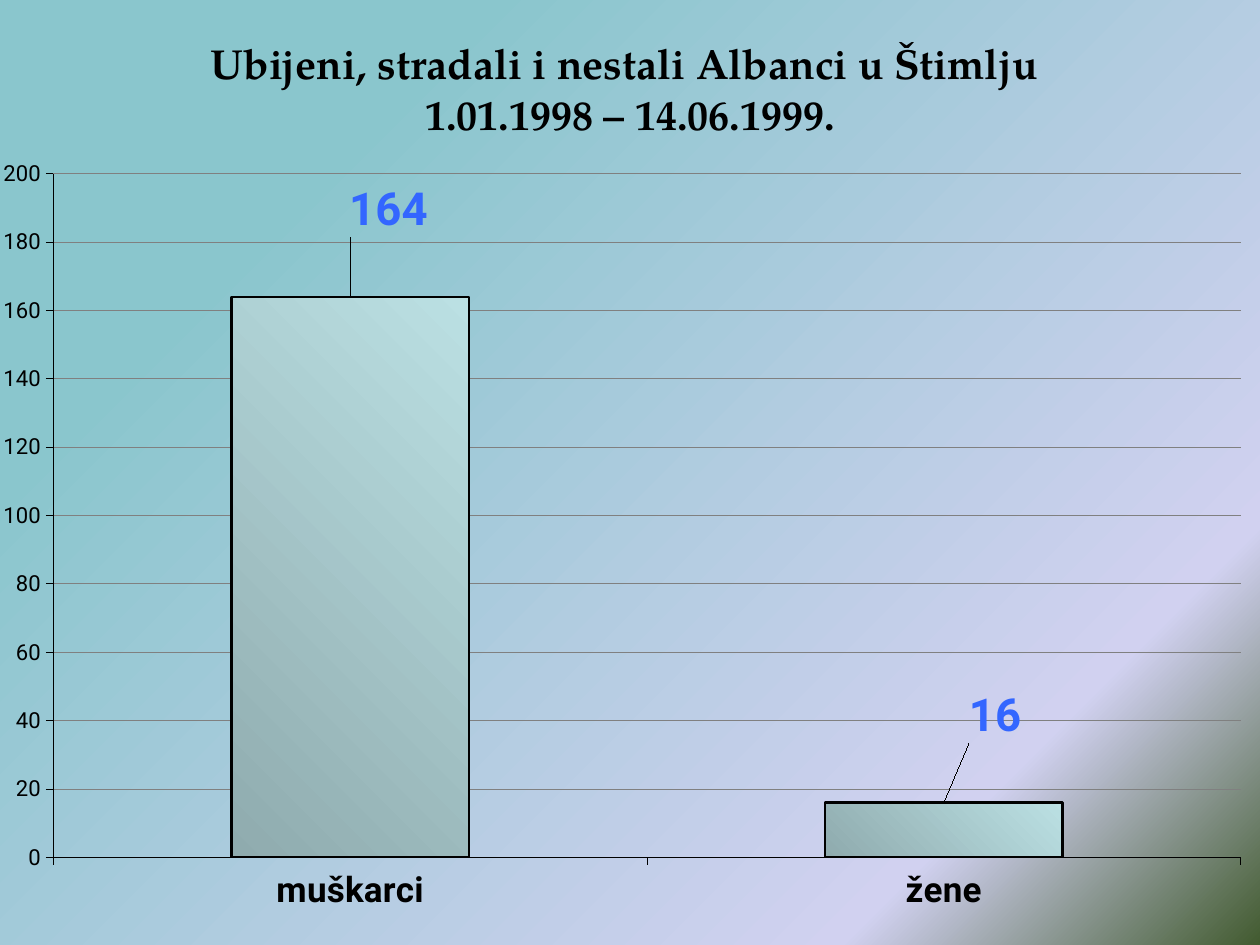
import copy

import pptx
import pptx.chart.data
import pptx.dml.color
import pptx.enum.chart
import pptx.enum.text
import pptx.oxml
import pptx.oxml.ns
import pptx.util


def color(hex_code):
    return pptx.dml.color.RGBColor.from_string(hex_code)


def paint_gradient(fill, owner, angle, stops):
    """Fill with (position, colour) stops; the angle runs counter-clockwise."""
    fill.gradient()
    fill.gradient_angle = angle
    stop_list = owner.find(".//" + pptx.oxml.ns.qn("a:gsLst"))
    while len(stop_list) < len(stops):
        stop_list.append(copy.deepcopy(stop_list[-1]))
    for stop, (position, hex_code) in zip(fill.gradient_stops, stops):
        stop.position = position
        stop.color.rgb = color(hex_code)


presentation = pptx.Presentation()
presentation.slide_width = pptx.util.Inches(10)
presentation.slide_height = pptx.util.Inches(7.5)
width, height = presentation.slide_width, presentation.slide_height
slide = presentation.slides.add_slide(presentation.slide_layouts[6])

# Background
paint_gradient(slide.background.fill, slide.element, 315,
               [(0.22, "8AC6CD"), (0.81, "D1D1F0"), (1, "425B30")])

# Column chart
chart_data = pptx.chart.data.CategoryChartData()
chart_data.categories = ["muškarci", "žene"]
chart_data.add_series("Series 1", [164, 16])
chart = slide.shapes.add_chart(
    pptx.enum.chart.XL_CHART_TYPE.COLUMN_CLUSTERED,
    pptx.util.Inches(-0.21), pptx.util.Inches(1.25),
    pptx.util.Inches(10.21), pptx.util.Inches(6.13), chart_data).chart
chart.has_title = False
chart.has_legend = False
chart.font.name = "Roboto"
chart.font.color.rgb = color("000000")

# Axes
for axis, size, bold in [(chart.category_axis, 20, True),
                         (chart.value_axis, 12.6, False)]:
    axis.tick_labels.font.size = pptx.util.Pt(size)
    axis.tick_labels.font.bold = bold
    axis.tick_labels.font.name = "Roboto"
    axis.tick_labels.font.color.rgb = color("000000")
    axis.major_tick_mark = pptx.enum.chart.XL_TICK_MARK.OUTSIDE
    axis.format.line.color.rgb = color("000000")
    axis.format.line.width = pptx.util.Pt(0.31)
chart.category_axis.tick_label_position = pptx.enum.chart.XL_TICK_LABEL_POSITION.LOW
chart.value_axis.minimum_scale = 0
chart.value_axis.maximum_scale = 200
chart.value_axis.major_unit = 20
gridlines = chart.value_axis.major_gridlines.format.line
gridlines.color.rgb = color("808080")
gridlines.width = pptx.util.Pt(0.31)

# Columns
plot = chart.plots[0]
plot.gap_width = 150
plot.vary_by_categories = False
series = plot.series[0]
paint_gradient(series.format.fill, series._element, 45,
               [(0, "8FABAE"), (1, "BBE0E3")])
series.format.line.color.rgb = color("000000")
series.format.line.width = pptx.util.Pt(1.25)

# Value labels, shifted up and to the right of each column
namespace = pptx.oxml.ns.nsdecls("c")
for index, shift in enumerate([0.03, 0.04]):
    label = series.points[index].data_label
    label.position = pptx.enum.chart.XL_LABEL_POSITION.OUTSIDE_END
    label.font.size = pptx.util.Pt(26)
    label.font.bold = True
    label.font.name = "Roboto"
    label.font.color.rgb = color("3366FF")
    label_index = series._element.findall(".//" + pptx.oxml.ns.qn("c:dLbl"))[index][0]
    label_index.addnext(pptx.oxml.parse_xml(
        f'<c:layout {namespace}><c:manualLayout>'
        f'<c:x val="{shift}"/><c:y val="-0.07"/></c:manualLayout></c:layout>'))

# Plot area as shares of the chart
plot_area = chart._chartSpace.find(".//" + pptx.oxml.ns.qn("c:plotArea"))
for old_layout in plot_area.findall(pptx.oxml.ns.qn("c:layout")):
    plot_area.remove(old_layout)
plot_area.insert(0, pptx.oxml.parse_xml(
    f'<c:layout {namespace}><c:manualLayout><c:layoutTarget val="inner"/>'
    '<c:xMode val="edge"/><c:yMode val="edge"/><c:x val="0.062"/><c:y val="0.021"/>'
    '<c:w val="0.923"/><c:h val="0.885"/></c:manualLayout></c:layout>'))

# Title
title = slide.shapes.add_textbox(0, height // 30, width, height // 6)
title.text_frame.word_wrap = True
title.text_frame.vertical_anchor = pptx.enum.text.MSO_ANCHOR.TOP
paragraph = title.text_frame.paragraphs[0]
paragraph.text = "Ubijeni, stradali i nestali Albanci u Štimlju \v1.01.1998 – 14.06.1999."
paragraph.alignment = pptx.enum.text.PP_ALIGN.CENTER
paragraph.font.name = "TeX Gyre Pagella"
paragraph.font.size = pptx.util.Pt(24)
paragraph.font.bold = True
paragraph.font.color.rgb = color("000000")

presentation.save("out.pptx")
